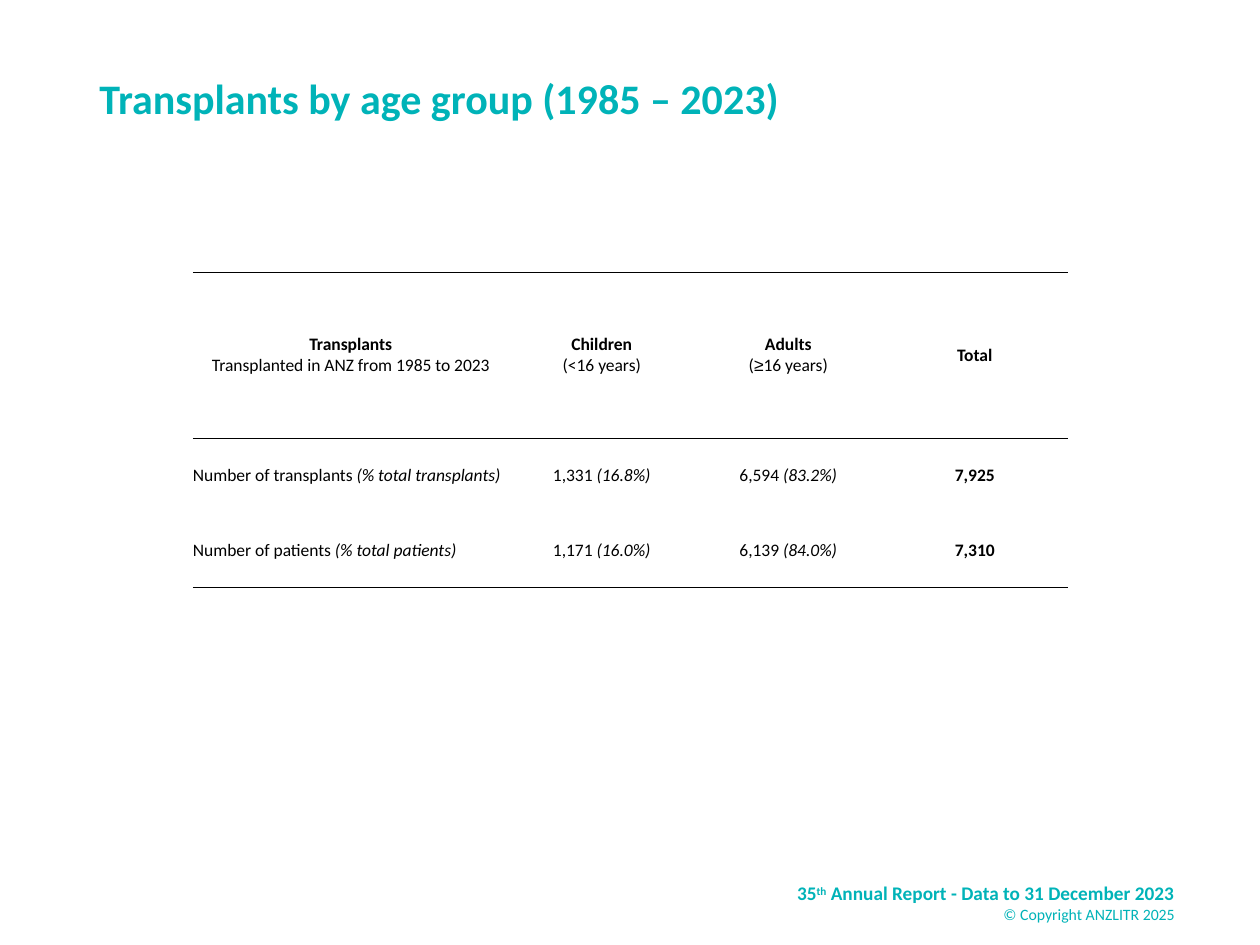
from lxml import etree
from pptx import Presentation
from pptx.dml.color import RGBColor
from pptx.enum.text import MSO_ANCHOR, PP_ALIGN
from pptx.oxml.ns import qn
from pptx.util import Cm, Pt

LEFT, CENTER, RIGHT = PP_ALIGN.LEFT, PP_ALIGN.CENTER, PP_ALIGN.RIGHT
MIDDLE = MSO_ANCHOR.MIDDLE
TITLE_ONLY = 5
TEAL, BLACK = "00B3B8", "000000"

BOLD = {"bold": True}
ITALIC = {"italic": True}
PLAIN = {}


def rgb(value):
    return RGBColor.from_string(value)


class ReportSlide:
    font_name = "Calibri"
    margins = ("margin_left", "margin_right", "margin_top", "margin_bottom")

    def __init__(self, deck):
        self.slide = deck.slides.add_slide(deck.slide_layouts[TITLE_ONLY])

    def add_lines(self, frame, lines, color, size, align):
        for index, runs in enumerate(lines):
            paragraph = frame.add_paragraph() if index else frame.paragraphs[0]
            paragraph.alignment = align
            for text, changes in runs:
                run = paragraph.add_run()
                run.text = text
                style = {"name": self.font_name, "size": Pt(size),
                         "bold": False, "italic": False, **changes}
                for key, value in style.items():
                    setattr(run.font, key, value)
                run.font.color.rgb = rgb(color)

    def title(self, text, left, top, width, height):
        heading = self.slide.shapes.title
        place = {"left": left, "top": top, "width": width, "height": height}
        for key, value in place.items():
            setattr(heading, key, Cm(value))
        frame = heading.text_frame
        frame.vertical_anchor = MIDDLE
        self.add_lines(frame, [[(text, BOLD)]], TEAL, 24, LEFT)
        frame.paragraphs[0].line_spacing = 0.9

    def footer(self, lines, left, top, width, height):
        box = self.slide.shapes.add_textbox(Cm(left), Cm(top), Cm(width), Cm(height))
        box.text_frame.word_wrap = True
        self.add_lines(box.text_frame, lines, TEAL, 11, RIGHT)
        return box.text_frame

    def borders(self, cell, ruled):
        properties = cell._tc.get_or_add_tcPr()
        for side in ("lnL", "lnR", "lnT", "lnB"):
            line = etree.SubElement(properties, qn(f"a:{side}"), w=str(Pt(1)))
            if side in ruled:
                fill = etree.SubElement(line, qn("a:solidFill"))
                etree.SubElement(fill, qn("a:srgbClr"), val=BLACK)
            else:
                etree.SubElement(line, qn("a:noFill"))

    def table(self, rows, left, top, widths, heights):
        grid = self.slide.shapes.add_table(
            len(rows), len(widths), Cm(left), Cm(top),
            Cm(sum(widths)), Cm(sum(heights))).table
        grid.first_row = grid.horz_banding = False
        for column, width in zip(grid.columns, widths):
            column.width = Cm(width)
        rules = [("lnT", "lnB"), ("lnT",), ("lnB",)]
        for r, (row, height) in enumerate(zip(rows, heights)):
            grid.rows[r].height = Cm(height)
            for c, lines in enumerate(row):
                cell = grid.cell(r, c)
                for margin in self.margins:
                    setattr(cell, margin, 0)
                cell.vertical_anchor = MIDDLE
                self.borders(cell, rules[r])
                cell.fill.background()
                align = LEFT if r and c == 0 else CENTER
                self.add_lines(cell.text_frame, lines, BLACK, 10, align)


def count_row(label, share_label, children, adults, total):
    pairs = [(label, share_label), children, adults]
    cells = [[[(f"{count} ", PLAIN), (f"({share})", ITALIC)]] for count, share in pairs]
    return cells + [[[(total, BOLD)]]]


def main():
    deck = Presentation()
    deck.slide_width, deck.slide_height = Cm(25.4), Cm(19.05)
    report = ReportSlide(deck)
    report.title("Transplants by age group (1985 – 2023)", 1.75, 0.69, 21.9, 2.67)

    header = [
        [[("Transplants", BOLD)], [("Transplanted in ANZ from 1985 to 2023", PLAIN)]],
        [[("Children", BOLD)], [("(<16 years)", PLAIN)]],
        [[("Adults", BOLD)],
         [("(", PLAIN), ("≥", {"name": "Arial"}), ("16 years)", PLAIN)]],
        [[("Total", BOLD)]],
    ]
    transplants = count_row("Number of transplants", "% total transplants",
                            ("1,331", "16.8%"), ("6,594", "83.2%"), "7,925")
    patients = count_row("Number of patients", "% total patients",
                         ("1,171", "16.0%"), ("6,139", "84.0%"), "7,310")
    report.table([header, transplants, patients], 3.89, 5.49,
                 [6.36] + [3.76] * 3, [3.35, 1.5, 1.5])

    edition = [("35", BOLD), ("th", BOLD),
               (" Annual Report - Data to 31 December 2023", BOLD)]
    rights = [("© Copyright ANZLITR 2025", {"size": Pt(9)})]
    footer = report.footer([edition, rights], 15.37, 17.65, 8.56, 1.02)
    ordinal = footer.paragraphs[0].runs[1]
    ordinal.font._element.set("baseline", "30000")

    deck.save("out.pptx")


if __name__ == "__main__":
    main()
